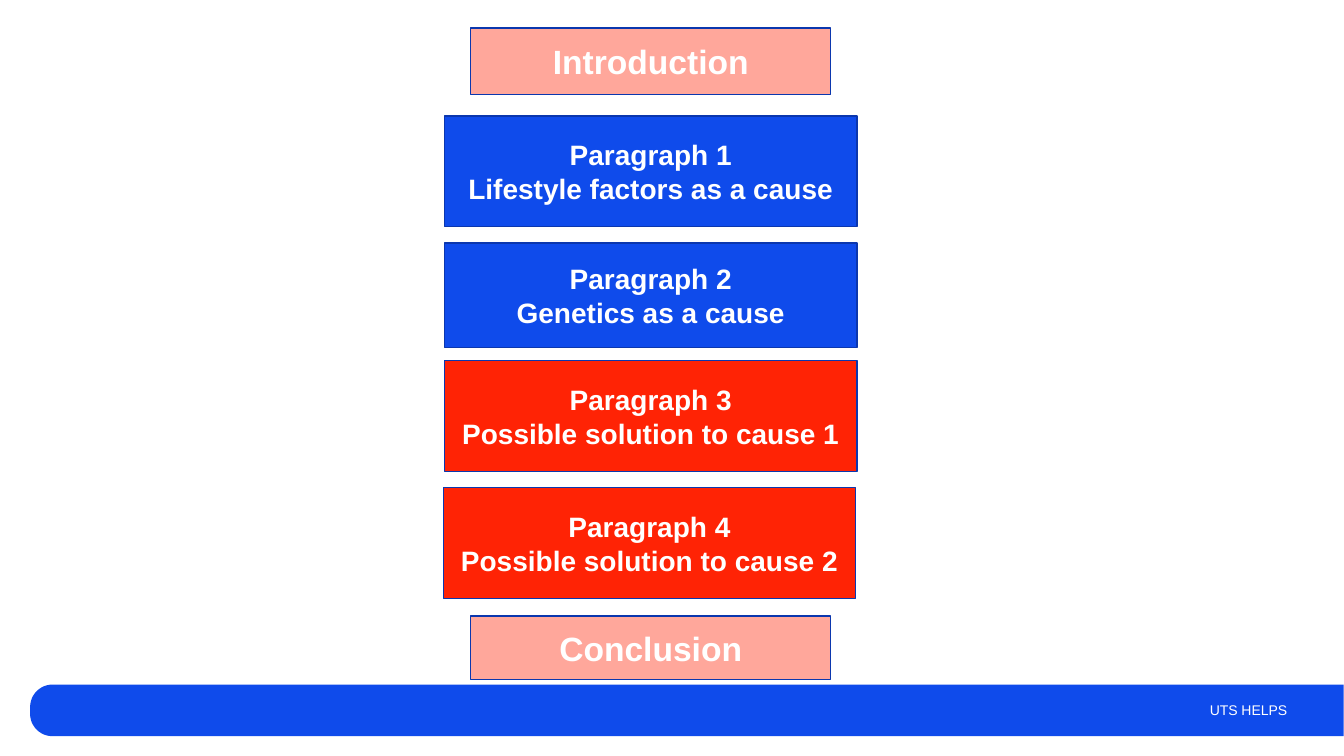
from pptx import Presentation
from pptx.dml.color import RGBColor
from pptx.enum.shapes import MSO_SHAPE
from pptx.enum.text import MSO_ANCHOR, PP_ALIGN
from pptx.util import Cm, Pt

COLORS = {
    "blue": "0F4BEB",
    "outline": "0B37AE",
    "red": "FF2305",
    "pink": "FFA79B",
    "white": "FFFFFF",
}


def color(name):
    return RGBColor.from_string(COLORS[name])


def write_lines(shape, lines, size, alignment, bold):
    frame = shape.text_frame
    frame.word_wrap = True
    frame.vertical_anchor = MSO_ANCHOR.MIDDLE
    frame.text = "\n".join(lines)
    for paragraph in frame.paragraphs:
        paragraph.alignment = alignment
        paragraph.font.name = "Arial"
        paragraph.font.size = Pt(size)
        paragraph.font.bold = bold
        paragraph.font.color.rgb = color("white")


presentation = Presentation()
presentation.slide_width = Cm(33.87)
presentation.slide_height = Cm(19.05)
slide = presentation.slides.add_slide(presentation.slide_layouts[6])

# Footer bar, turned so that its rounded end faces left
footer_bar = slide.shapes.add_shape(
    MSO_SHAPE.ROUND_2_SAME_RECTANGLE, Cm(16.66), Cm(1.35), Cm(1.3), Cm(33.1))
footer_bar.rotation = 270
footer_bar.adjustments[0] = 0.433
footer_bar.adjustments[1] = 0
footer_bar.shadow.inherit = False
footer_bar.fill.solid()
footer_bar.fill.fore_color.rgb = color("blue")
footer_bar.line.fill.background()

# Essay outline: centre, top, width, height, fill, text size, lines
essay_parts = [
    (16.4, 0.71, 9.07, 1.68, "pink", 24, ["Introduction"]),
    (16.4, 2.92, 10.39, 2.79, "blue", 20,
     ["Paragraph 1", "Lifestyle factors as a cause"]),
    (16.4, 6.12, 10.39, 2.64, "blue", 20,
     ["Paragraph 2", "Genetics as a cause"]),
    (16.4, 9.09, 10.39, 2.79, "red", 20,
     ["Paragraph 3", "Possible solution to cause 1"]),
    (16.37, 12.29, 10.39, 2.79, "red", 20,
     ["Paragraph 4", "Possible solution to cause 2"]),
    (16.4, 15.52, 9.07, 1.6, "pink", 24, ["Conclusion"]),
]
for center, top, width, height, fill, size, lines in essay_parts:
    box = slide.shapes.add_shape(
        MSO_SHAPE.RECTANGLE, Cm(center - width / 2), Cm(top), Cm(width), Cm(height))
    box.shadow.inherit = False
    box.fill.solid()
    box.fill.fore_color.rgb = color(fill)
    box.line.color.rgb = color("outline")
    box.line.width = Pt(1)
    write_lines(box, lines, size, PP_ALIGN.CENTER, True)

# Footer text
footer_text = slide.shapes.add_textbox(Cm(17.68), Cm(17.37), Cm(15.01), Cm(1.02))
write_lines(footer_text, ["UTS HELPS"], 10, PP_ALIGN.RIGHT, False)

presentation.save("out.pptx")
